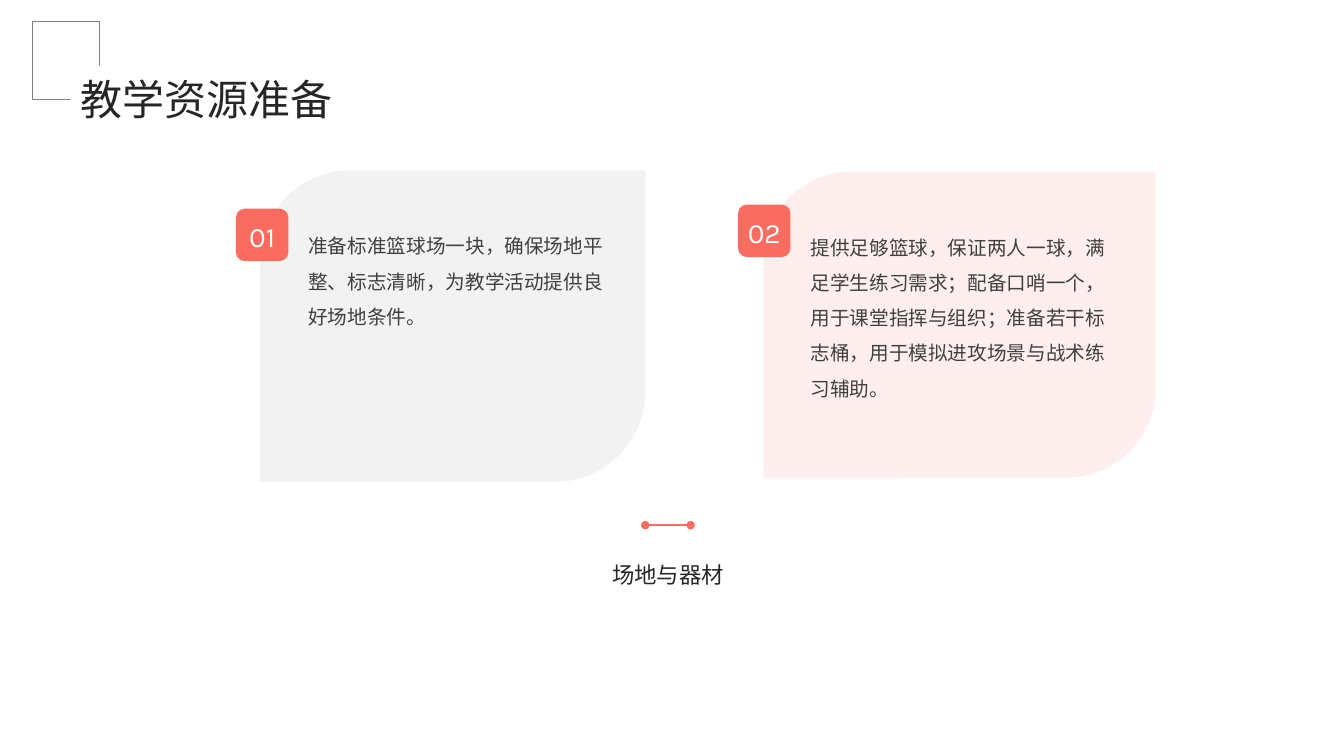
"""Build the teaching resources slide with two numbered cards."""
from dataclasses import dataclass

from lxml.etree import SubElement
from pptx import Presentation
from pptx.dml.color import RGBColor
from pptx.enum.shapes import MSO_CONNECTOR, MSO_SHAPE
from pptx.enum.text import MSO_ANCHOR, PP_ALIGN
from pptx.oxml.ns import qn
from pptx.util import Inches, Pt


@dataclass(frozen=True)
class Theme:
    accent: str = "FA6B60"
    card_gray: str = "BFBFBF"
    frame: str = "808080"
    white: str = "FFFFFF"
    heading: str = "262626"
    body: str = "404040"
    chinese_font: str = "Noto Sans CJK SC"
    number_font: str = "Karla"
    title_size: int = 30
    number_size: int = 20
    caption_size: int = 16
    body_size: int = 14


theme = Theme()
deck = Presentation()
deck.slide_width = Inches(13.33)
deck.slide_height = Inches(7.5)
page = deck.slides.add_slide(deck.slide_layouts[6])


def add_panel(kind, area, fill=None, opacity=100):
    """Add a plain shape without outline or shadow."""
    panel = page.shapes.add_shape(kind, *map(Inches, area))
    panel.shadow.inherit = False
    panel.line.fill.background()
    if fill is None:
        panel.fill.background()
        return panel
    panel.fill.solid()
    panel.fill.fore_color.rgb = RGBColor.from_string(fill)
    if opacity < 100:
        color = panel.fill._xPr.find(qn("a:solidFill"))[0]
        SubElement(color, qn("a:alpha"), val=str(opacity * 1000))
    return panel


def write_text(box, text, size, color, font, spacing, align=PP_ALIGN.LEFT,
               margins=(0.1, 0.05), wrap=True, anchor=MSO_ANCHOR.TOP):
    """Write one formatted paragraph into a box."""
    frame = box.text_frame
    across, down = map(Inches, margins)
    frame_format = {
        "margin_left": across, "margin_right": across,
        "margin_top": down, "margin_bottom": down,
        "word_wrap": wrap, "vertical_anchor": anchor,
    }
    for name, value in frame_format.items():
        setattr(frame, name, value)
    para = frame.paragraphs[0]
    para.alignment = align
    para.line_spacing = spacing
    span = para.add_run()
    span.text = text
    for name, value in {"size": Pt(size), "name": font}.items():
        setattr(span.font, name, value)
    span.font.color.rgb = RGBColor.from_string(color)
    SubElement(span.font._element, qn("a:ea"), typeface=font)


cards = [
    ("01", "准备标准篮球场一块，确保场地平整、标志清晰，为教学活动提供良好场地条件。",
     (2.58, 1.69, 3.82, 3.09), theme.card_gray, 20,
     (2.96, 2.16, 3.14, 2.27), (2.34, 2.07, 0.52, 0.52)),
    ("02", "提供足够篮球，保证两人一球，满足学生练习需求；配备口哨一个，用于课堂指挥与组织；"
     "准备若干标志桶，用于模拟进攻场景与战术练习辅助。",
     (7.57, 1.7, 3.89, 3.04), theme.accent, 10,
     (7.94, 2.17, 3.3, 2.26), (7.32, 2.03, 0.52, 0.52)),
]
for number, text, card_area, fill, opacity, text_area, badge_area in cards:
    card = add_panel(MSO_SHAPE.ROUND_2_DIAG_RECTANGLE, card_area, fill, opacity)
    card.adjustments[0] = 0.29
    card.adjustments[1] = 0
    body = page.shapes.add_textbox(*map(Inches, text_area))
    write_text(body, text, theme.body_size, theme.body, theme.chinese_font, 1.5)
    badge = add_panel(MSO_SHAPE.ROUNDED_RECTANGLE, badge_area, theme.accent)
    write_text(badge, number, theme.number_size, theme.white, theme.number_font, 1.1,
               PP_ALIGN.CENTER, (0.12, 0.12), False, MSO_ANCHOR.MIDDLE)

caption = page.shapes.add_textbox(Inches(1.71), Inches(5.39), Inches(9.83), Inches(1.2))
write_text(caption, "场地与器材", theme.caption_size, theme.heading, theme.chinese_font, 1.5,
           PP_ALIGN.CENTER, (0.07, 0.04))

divider = page.shapes.add_connector(
    MSO_CONNECTOR.STRAIGHT, Inches(6.4), Inches(5.21), Inches(6.85), Inches(5.21))
divider.line.width = Pt(1)
divider.line.color.rgb = RGBColor.from_string(theme.accent)
outline = divider.line._get_or_add_ln()
for end in ("a:headEnd", "a:tailEnd"):
    SubElement(outline, qn(end), type="oval")
SubElement(divider._element.spPr, qn("a:effectLst"))

corner_frame = add_panel(MSO_SHAPE.RECTANGLE, (0.32, 0.21, 0.67, 0.78))
corner_frame.line.color.rgb = RGBColor.from_string(theme.frame)
corner_frame.line.width = Pt(0.75)
add_panel(MSO_SHAPE.RECTANGLE, (0.7, 0.65, 0.61, 0.5), theme.white)

title = page.shapes.add_textbox(Inches(0.8), Inches(0.68), Inches(11.1), Inches(0.46))
write_text(title, "教学资源准备", theme.title_size, theme.heading, theme.chinese_font, 1.1,
           margins=(0, 0))

deck.save("out.pptx")
